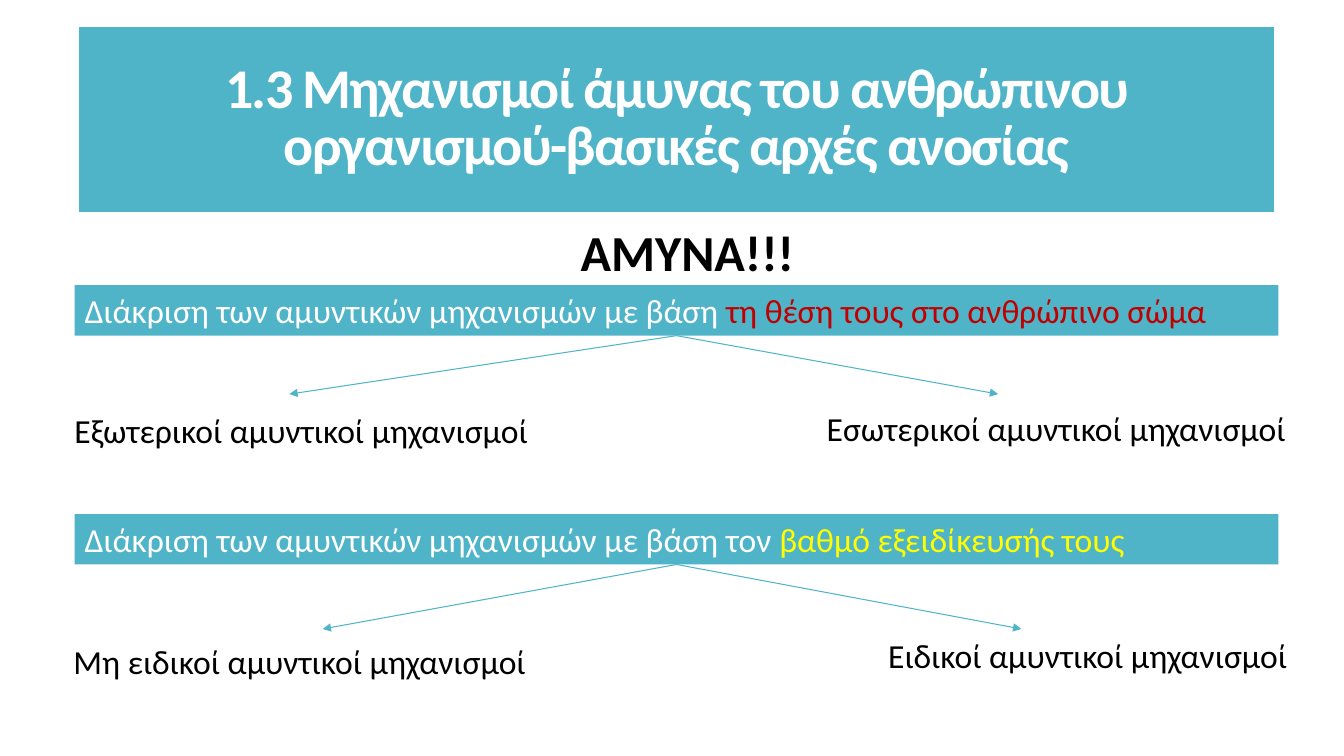
from lxml import etree
from pptx import Presentation
from pptx.dml.color import RGBColor
from pptx.enum.shapes import MSO_CONNECTOR, MSO_SHAPE
from pptx.enum.text import MSO_ANCHOR, PP_ALIGN
from pptx.oxml.ns import qn
from pptx.util import Inches, Pt

TEAL = RGBColor(0x50, 0xB4, 0xC8)
WHITE = RGBColor(0xFF, 0xFF, 0xFF)
BLACK = RGBColor(0, 0, 0)
RED = RGBColor(0xC0, 0, 0)
YELLOW = RGBColor(0xFF, 0xFF, 0)

RECTANGLE = MSO_SHAPE.RECTANGLE
STRAIGHT = MSO_CONNECTOR.STRAIGHT
MIDDLE = MSO_ANCHOR.MIDDLE
TOP = MSO_ANCHOR.TOP
LEFT, CENTER, JUSTIFY = PP_ALIGN.LEFT, PP_ALIGN.CENTER, PP_ALIGN.JUSTIFY

FONT = "Calibri"
PAGE_WIDTH, PAGE_HEIGHT = 13.33, 7.5
MARGIN, CONTENT_WIDTH = 0.74, 11.94
BANNER_HEIGHT = 0.5
LABEL_WIDTH = 5.02
BOTTOM_SIDE = 2


def style(para, size, color=None, bold=False, align=LEFT):
    para.alignment = align
    font = para.font
    font.name, font.size, font.bold = FONT, Pt(size), bold
    if color is not None:
        font.color.rgb = color


def add_title(page, left, top, width, height, text):
    title = page.shapes.title
    title.left, title.top = Inches(left), Inches(top)
    title.width, title.height = Inches(width), Inches(height)
    title.fill.solid()
    title.fill.fore_color.rgb = TEAL
    title.line.color.rgb = WHITE
    title.line.width = Pt(3)
    title.text_frame.word_wrap = True
    title.text_frame.vertical_anchor = MIDDLE
    para = title.text_frame.paragraphs[0]
    span = para.add_run()
    span.text = text
    style(para, 40, WHITE, True, CENTER)
    para.line_spacing = 0.85
    # Tightened letter spacing
    span.font._element.set("spc", "-120")


def add_label(page, left, top, width, height, text, size=24, **look):
    box = page.shapes.add_textbox(Inches(left), Inches(top), Inches(width), Inches(height))
    box.text_frame.word_wrap = True
    para = box.text_frame.paragraphs[0]
    para.text = text
    style(para, size, BLACK, **look)


def add_banner(page, left, top, width, height, spans):
    banner = page.shapes.add_shape(
        RECTANGLE, Inches(left), Inches(top), Inches(width), Inches(height))
    banner.shadow.inherit = False
    banner.fill.solid()
    banner.fill.fore_color.rgb = TEAL
    banner.line.fill.background()
    banner.text_frame.word_wrap = True
    banner.text_frame.vertical_anchor = TOP
    para = banner.text_frame.paragraphs[0]
    style(para, 24)
    for text, color in spans:
        span = para.add_run()
        span.text = text
        span.font.color.rgb = color
    return banner


def add_arrow(page, banner, x, y):
    arrow = page.shapes.add_connector(STRAIGHT, 0, 0, Inches(x), Inches(y))
    arrow.begin_connect(banner, BOTTOM_SIDE)
    arrow.line.color.rgb = TEAL
    arrow.line.width = Pt(0.75)
    etree.SubElement(arrow.line._get_or_add_ln(), qn("a:tailEnd"), type="triangle")
    etree.SubElement(arrow._element.spPr, qn("a:effectLst"))


def add_division(page, top, spans, branches):
    """A banner with an arrow towards each of its kinds; heights count from top."""
    banner = add_banner(page, MARGIN, top, CONTENT_WIDTH, BANNER_HEIGHT, spans)
    for text, (left, drop), (tip_x, tip_drop) in branches:
        add_arrow(page, banner, tip_x, top + tip_drop)
        width = min(LABEL_WIDTH, PAGE_WIDTH - left)
        add_label(page, left, top + drop, width, BANNER_HEIGHT, text)


def main():
    deck = Presentation()
    deck.slide_width, deck.slide_height = Inches(PAGE_WIDTH), Inches(PAGE_HEIGHT)
    page = deck.slides.add_slide(deck.slide_layouts[5])

    # Heading
    add_title(page, MARGIN + 0.02, 0.25, CONTENT_WIDTH - 0.04, 1.87,
              "1.3 Μηχανισμοί άμυνας του ανθρώπινου οργανισμού-βασικές αρχές ανοσίας")
    add_label(page, 5.66, 2.14, 2.44, 0.71, "ΑΜΥΝΑ!!!", 36, bold=True, align=JUSTIFY)

    # Division by place in the body
    add_division(
        page, 2.83,
        [("Διάκριση των αμυντικών μηχανισμών με βάση ", WHITE),
         ("τη θέση τους στο ανθρώπινο σώμα", RED)],
        [("Εξωτερικοί αμυντικοί μηχανισμοί", (0.64, 1.19), (2.87, 1.08)),
         ("Εσωτερικοί αμυντικοί μηχανισμοί", (8.1, 1.17), (9.9, 1.08))])

    # Division by degree of specialisation
    add_division(
        page, 5.1,
        [("Διάκριση των αμυντικών μηχανισμών με βάση τον ", WHITE),
         ("βαθμό εξειδίκευσής τους", YELLOW)],
        [("Μη ειδικοί αμυντικοί μηχανισμοί", (0.63, 1.21), (3.2, 1.14)),
         ("Ειδικοί αμυντικοί μηχανισμοί", (8.71, 1.15), (10.13, 1.14))])

    deck.save("out.pptx")


if __name__ == "__main__":
    main()
